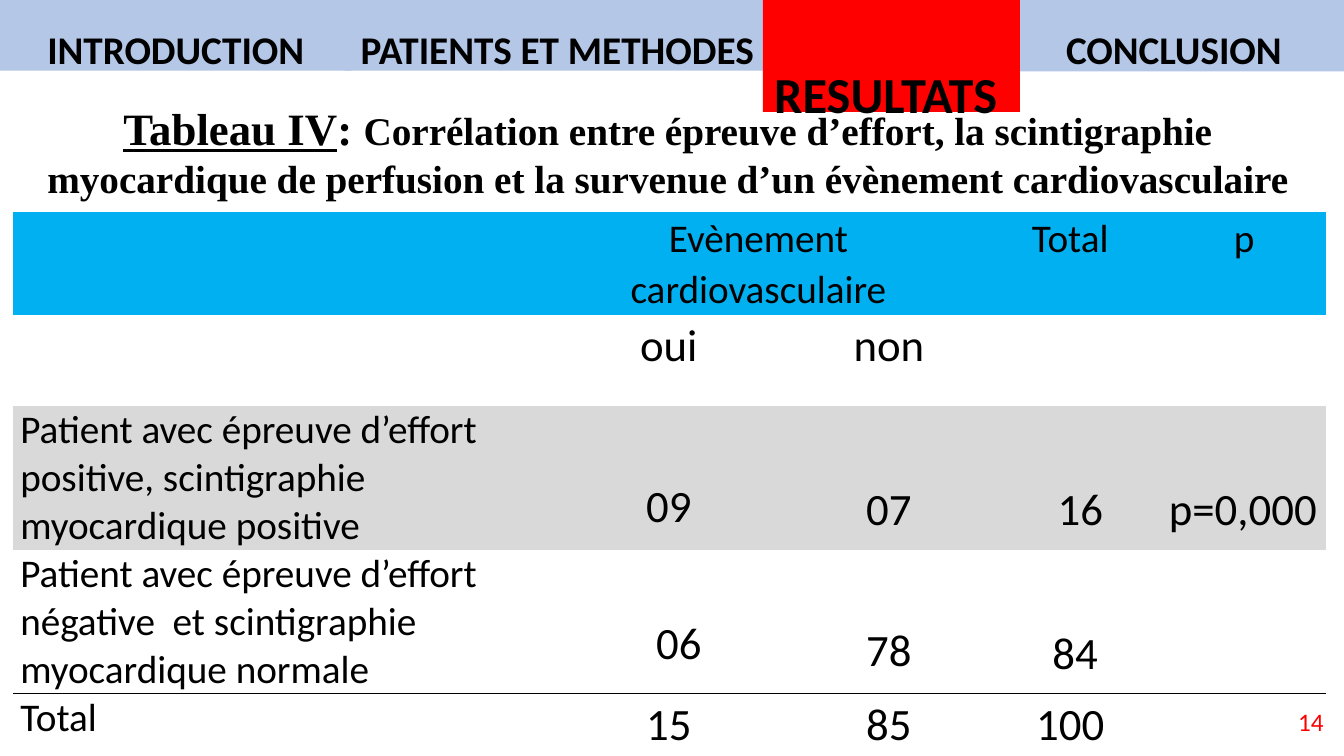
from lxml import etree
from pptx import Presentation
from pptx.dml.color import RGBColor
from pptx.enum.shapes import MSO_SHAPE
from pptx.enum.text import MSO_ANCHOR, PP_ALIGN
from pptx.oxml.ns import qn
from pptx.util import Pt

LEFT, CENTER, RIGHT = PP_ALIGN.LEFT, PP_ALIGN.CENTER, PP_ALIGN.RIGHT
TOP, MIDDLE = MSO_ANCHOR.TOP, MSO_ANCHOR.MIDDLE
RECT = MSO_SHAPE.RECTANGLE

BLACK, RED, TAB_BLUE = "000000", "FF0000", "B4C7E7"
HEADER_BLUE, BAND_GREY = "00B0F0", "D9D9D9"
SANS, SERIF = "Calibri", "Times New Roman"
PLAIN_STYLE = "{2D5ABB26-0587-4C30-8999-92F81FD0307C}"

# Section tabs: label, left, width, height, fill, size, line spacing
TABS = [
    ("PATIENTS ET METHODES", 246, 304, 52.5, TAB_BLUE, 28, 1.5),
    ("CONCLUSION", 717, 243, 53, TAB_BLUE, 28, 1.5),
    ("INTRODUCTION", 0, 251, 52.5, TAB_BLUE, 28, 1.5),
    ("RESULTATS ", 545, 183.5, 82, RED, 36, 2.0),
]

COLUMNS = [375, 186.5, 128, 131, 117.5]
ROWS = [69, 65.5, 102, 101, 39]
FILLS = [HEADER_BLUE, None, BAND_GREY, None, None]

# Cells: text, extra top margin, extra left margin
CELLS = [
    [None, ("Evènement cardiovasculaire", 0, 0), None, ("Total", 0, 0), ("p", 0, 0)],
    [None, ("oui", 0, 0), ("non", 0, 0), None, None],
    [("Patient avec épreuve d’effort positive, scintigraphie myocardique positive", 0, 0),
     ("09", 50, 0), ("07", 52, 0), ("16", 52, 14.5), ("p=0,000", 52, 0)],
    [("Patient avec épreuve d’effort négative  et scintigraphie myocardique normale", 0, 0),
     ("06", 45, 14.5), ("78", 50, 0), ("84", 52, 7), None],
    [("Total", 0, 0), ("15", 0, 0), ("85", 0, 0), ("100", 0, 0), None],
]


def rgb(value):
    return RGBColor.from_string(value)


def add_run(p, text, size, font=SANS, color=BLACK, bold=False, underline=False):
    r = p.add_run()
    r.text = text
    r.font.size = Pt(size)
    r.font.name = font
    r.font.color.rgb = rgb(color)
    r.font.bold = bold
    r.font.underline = underline


def add_tab(s, label, left, width, height, fill, size, spacing):
    sp = s.shapes.add_shape(RECT, Pt(left), Pt(-2), Pt(width), Pt(height))
    sp.shadow.inherit = False
    sp.fill.solid()
    sp.fill.fore_color.rgb = rgb(fill)
    sp.line.fill.background()
    tf = sp.text_frame
    tf.word_wrap = True
    tf.vertical_anchor = TOP
    p = tf.paragraphs[0]
    p.alignment = CENTER
    p.line_spacing = spacing
    add_run(p, label, size, bold=True)


def add_text(s, left, top, width, height, align, anchor=TOP):
    """Add a wrapping text box and return its first paragraph."""
    tf = s.shapes.add_textbox(Pt(left), Pt(top), Pt(width), Pt(height)).text_frame
    tf.word_wrap = True
    tf.vertical_anchor = anchor
    p = tf.paragraphs[0]
    p.alignment = align
    return p


def add_border(cell, side):
    ln = etree.Element(qn(f"a:{side}"), w=str(Pt(1)))
    fill = etree.SubElement(ln, qn("a:solidFill"))
    etree.SubElement(fill, qn("a:srgbClr"), val=BLACK)
    # Borders come before the fill in the cell properties
    cell._tc.get_or_add_tcPr().insert(0, ln)


def fill_cell(cell, row, col, content):
    if FILLS[row]:
        cell.fill.solid()
        cell.fill.fore_color.rgb = rgb(FILLS[row])
    else:
        cell.fill.background()
    if not content:
        return
    text, extra_top, extra_left = content
    cell.margin_left, cell.margin_right = Pt(5 + extra_left), Pt(5)
    cell.margin_top, cell.margin_bottom = Pt(extra_top), Pt(0)
    p = cell.text_frame.paragraphs[0]
    p.alignment = LEFT if col == 0 or text.startswith("p=") else CENTER
    p.line_spacing = 1.0 if col == 0 else 1.07
    add_run(p, text, 28 if row == 0 or col == 0 else 32)


def add_results_table(s):
    frame = s.shapes.add_table(len(ROWS), len(COLUMNS), Pt(9.5), Pt(151.5),
                               Pt(sum(COLUMNS)), Pt(sum(ROWS)))
    table = frame.table
    table.first_row = table.horz_banding = False
    table._tbl.tblPr.find(qn("a:tableStyleId")).text = PLAIN_STYLE
    for column, width in zip(table.columns, COLUMNS):
        column.width = Pt(width)
    for row, height in zip(table.rows, ROWS):
        row.height = Pt(height)
    table.cell(0, 1).merge(table.cell(0, 2))
    for i, contents in enumerate(CELLS):
        for j, content in enumerate(contents):
            fill_cell(table.cell(i, j), i, j, content)
    # Rule above the totals
    for j in range(len(COLUMNS)):
        add_border(table.cell(3, j), "lnB")
        add_border(table.cell(4, j), "lnT")


def main():
    prs = Presentation()
    prs.slide_width, prs.slide_height = Pt(960), Pt(540)
    s = prs.slides.add_slide(prs.slide_layouts[6])

    add_results_table(s)

    # Page number
    p = add_text(s, 901.5, 500.5, 51, 29, RIGHT, MIDDLE)
    add_run(p, "14", 18, color=RED)

    # Table title
    p = add_text(s, 9.5, 68.5, 935, 101.5, CENTER)
    add_run(p, "Tableau IV", 32, SERIF, bold=True, underline=True)
    add_run(p, ": ", 32, SERIF, bold=True)
    add_run(p, "Corrélation entre épreuve d’effort, la scintigraphie myocardique "
               "de perfusion et la survenue d’un évènement cardiovasculaire",
            28, SERIF, bold=True)

    # Section tabs
    for tab in TABS:
        add_tab(s, *tab)

    prs.save("out.pptx")


if __name__ == "__main__":
    main()
